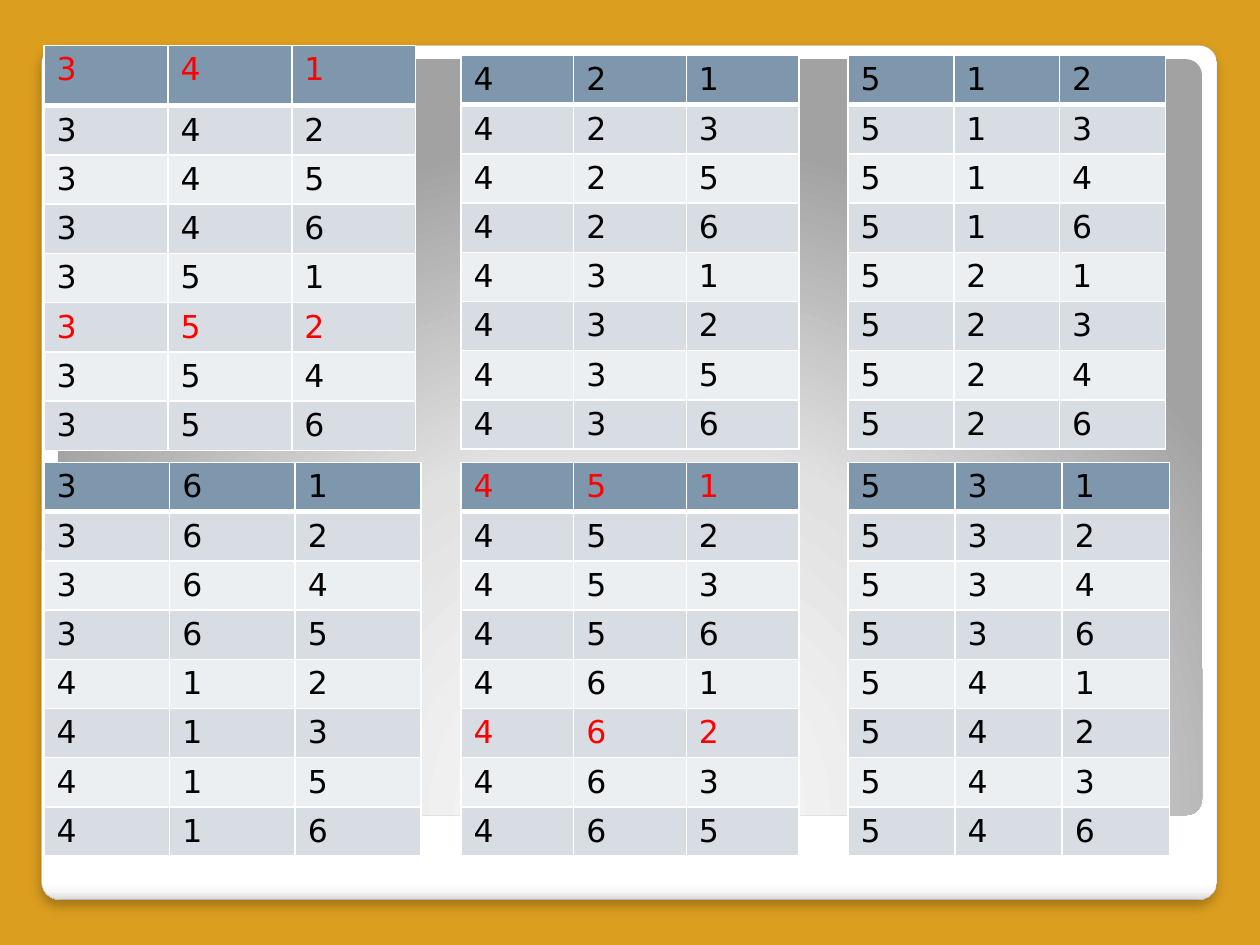
from lxml import etree
from pptx import Presentation
from pptx.dml.color import RGBColor
from pptx.enum.shapes import MSO_SHAPE
from pptx.oxml import parse_xml
from pptx.oxml.ns import nsdecls, qn
from pptx.util import Inches, Pt

BACKGROUND = "DC9E1F"
HEADER, BANDS = "7E97AD", ("D8DDE3", "ECEFF1")
BLACK, RED, WHITE = "000000", "FF0000", "FFFFFF"
ROW_HEIGHT = 0.39
UPPER, LOWER = 0.44, 3.67

HIGHLIGHTED = {"341", "352", "451", "462"}
LISTS = [
    (0.35, 0.36, 2.95, 0.48, "341 342 345 346 351 352 354 356"),
    (0.35, LOWER, 2.99, ROW_HEIGHT, "361 362 364 365 412 413 415 416"),
    (3.66, UPPER, 2.68, ROW_HEIGHT, "421 423 425 426 431 432 435 436"),
    (3.66, LOWER, 2.68, ROW_HEIGHT, "451 452 453 456 461 462 463 465"),
    (6.73, UPPER, 2.52, ROW_HEIGHT, "512 513 514 516 521 523 524 526"),
    (6.73, LOWER, 2.55, ROW_HEIGHT, "531 532 534 536 541 542 543 546"),
]

PANEL_STOPS = [(0, "FFFFFF"), (98, "FFFFFF"), (99, "F7F7F7"), (100, "DADADA")]
GLOW_STOPS = [(0, "FFFFFF"), (55, "E1E1E1"), (100, "A2A2A2")]
DOWNWARD = '<a:lin ang="5400000" scaled="0"/>'
FROM_BELOW = ('<a:path path="circle"><a:fillToRect l="50000" t="175000" '
              'r="50000" b="-75000"/></a:path>')


def rgb(color):
    return RGBColor.from_string(color)


def add_panel(slide, box, stops, direction):
    panel = slide.shapes.add_shape(MSO_SHAPE.ROUNDED_RECTANGLE, *map(Inches, box))
    panel.adjustments[0] = 0.021
    panel.shadow.inherit = False
    panel.line.fill.background()
    gradient = "".join(
        f'<a:gs pos="{pos * 1000}"><a:srgbClr val="{color}"/></a:gs>'
        for pos, color in stops)
    panel._element.spPr.find(qn("a:prstGeom")).addnext(parse_xml(
        f'<a:gradFill {nsdecls("a")} rotWithShape="1"><a:gsLst>{gradient}</a:gsLst>'
        f'{direction}</a:gradFill>'))
    return panel


def add_shadow(panel):
    effects = panel._element.spPr.find(qn("a:effectLst"))
    effects.append(parse_xml(
        f'<a:outerShdw {nsdecls("a")} blurRad="{Pt(6)}" dist="{Pt(4)}" dir="5400000" '
        f'algn="tl" rotWithShape="0"><a:srgbClr val="{BLACK}">'
        '<a:alpha val="25000"/></a:srgbClr></a:outerShdw>'))


def set_borders(cell, widths):
    properties = cell._tc.get_or_add_tcPr()
    for side, width in widths.items():
        border = etree.SubElement(properties, qn(f"a:ln{side}"), w=str(Pt(width)))
        fill = etree.SubElement(border, qn("a:solidFill"))
        etree.SubElement(fill, qn("a:srgbClr"), val=WHITE)


def add_list(slide, left, top, width, header_height, entries):
    triples = entries.split()
    height = header_height + ROW_HEIGHT * (len(triples) - 1)
    table = slide.shapes.add_table(
        len(triples), 3, *map(Inches, (left, top, width, height))).table
    for r, triple in enumerate(triples):
        table.rows[r].height = Inches(ROW_HEIGHT if r else header_height)
        for c, digit in enumerate(triple):
            cell = table.cell(r, c)
            set_borders(cell, {"L": 1, "R": 1, "T": 3 if r == 1 else 1,
                               "B": 1 if r else 3})
            cell.fill.solid()
            cell.fill.fore_color.rgb = rgb(BANDS[(r - 1) % 2] if r else HEADER)
            cell.text = digit
            font = cell.text_frame.paragraphs[0].font
            font.name, font.size, font.bold = "DejaVu Sans", Pt(18), False
            font.color.rgb = rgb(RED if triple in HIGHLIGHTED else BLACK)


def main():
    deck = Presentation()
    deck.slide_width, deck.slide_height = Inches(10), Inches(7.5)
    slide = deck.slides.add_slide(deck.slide_layouts[6])
    slide.background.fill.solid()
    slide.background.fill.fore_color.rgb = rgb(BACKGROUND)

    panel = add_panel(slide, (0.33, 0.36, 9.33, 6.78), PANEL_STOPS, DOWNWARD)
    panel.line.color.rgb = rgb("A4A4A4")
    panel.line.width = Pt(0.16)
    add_shadow(panel)
    add_panel(slide, (0.46, 0.47, 9.08, 6), GLOW_STOPS, FROM_BELOW)

    for entry in LISTS:
        add_list(slide, *entry)
    deck.save("out.pptx")


if __name__ == "__main__":
    main()
